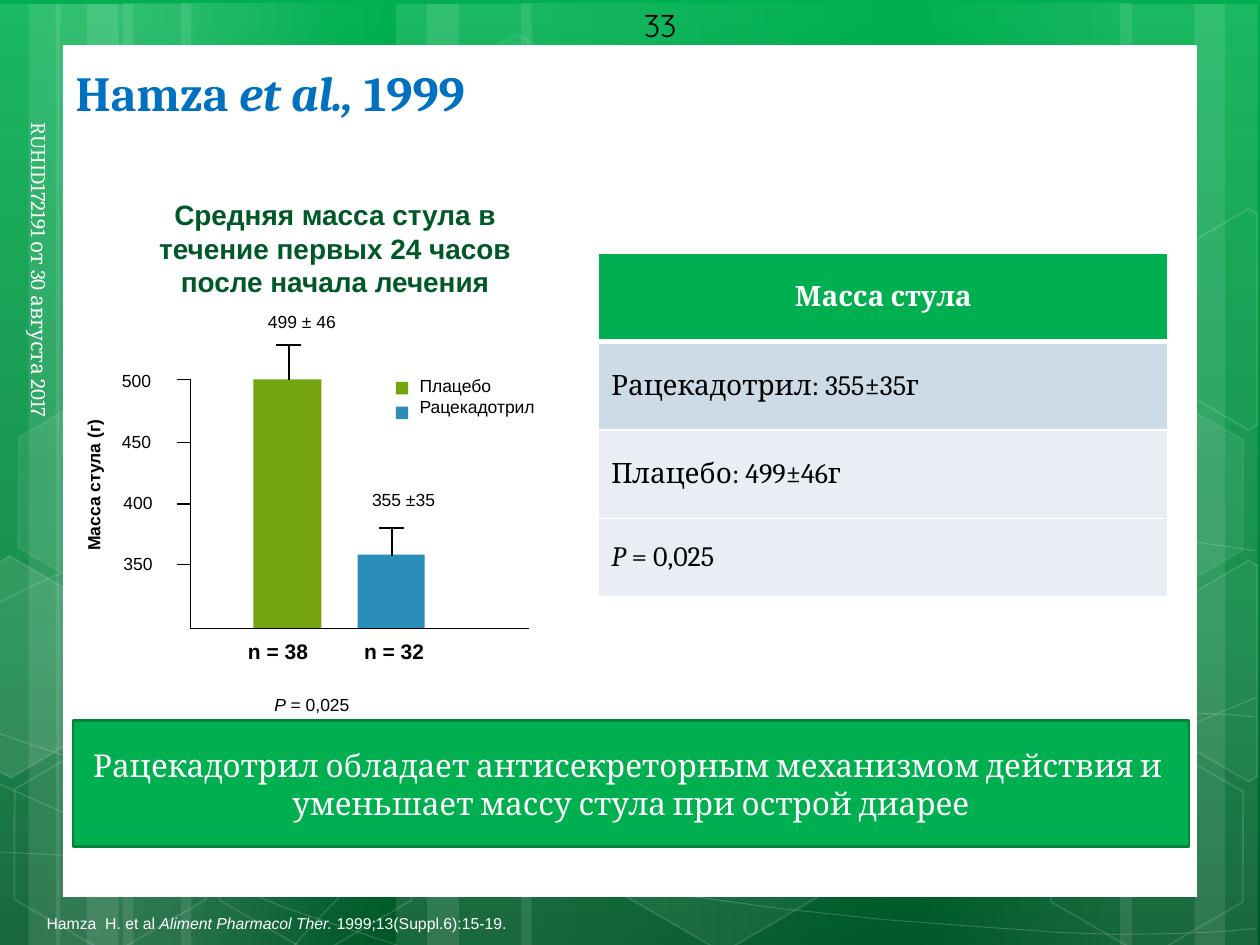
from copy import deepcopy
from dataclasses import dataclass
from math import cos, radians, sin
from lxml.etree import SubElement
from pptx import Presentation
from pptx.dml.color import RGBColor
from pptx.enum.shapes import MSO_CONNECTOR, MSO_SHAPE
from pptx.enum.text import MSO_ANCHOR, MSO_AUTO_SIZE, PP_ALIGN
from pptx.oxml.ns import qn
from pptx.util import Cm, Pt

RECT, HEX = MSO_SHAPE.RECTANGLE, MSO_SHAPE.HEXAGON
LINE = MSO_CONNECTOR.STRAIGHT
LEFT, MID = PP_ALIGN.LEFT, PP_ALIGN.CENTER
CENTRE, BOTTOM = MSO_ANCHOR.MIDDLE, MSO_ANCHOR.BOTTOM
FIT, FIXED = MSO_AUTO_SIZE.SHAPE_TO_FIT_TEXT, MSO_AUTO_SIZE.NONE


@dataclass
class Theme:
    white: RGBColor = RGBColor.from_string("FFFFFF")
    black: RGBColor = RGBColor.from_string("000000")
    green: RGBColor = RGBColor.from_string("00B050")
    mid: RGBColor = RGBColor.from_string("00843C")
    dark: RGBColor = RGBColor.from_string("005828")
    rim: RGBColor = RGBColor.from_string("00823B")
    blue: RGBColor = RGBColor.from_string("0070C0")
    lime: RGBColor = RGBColor.from_string("74A510")
    sky: RGBColor = RGBColor.from_string("2A8DBA")
    band: RGBColor = RGBColor.from_string("CDDBE7")
    pale: RGBColor = RGBColor.from_string("E8EEF3")
    serif: str = "Cambria"
    sans: str = "Arial"
    round: str = "Quicksand"
    title: int = 28
    lead: int = 18
    head: int = 16
    note: int = 12
    label: int = 10
    cite: int = 9


theme = Theme()


def paint(shape, fill=None, alpha=100, edge=None, width=1, thin=100):
    shape.shadow.inherit = False
    for part, hue, share, tag in ((shape.fill, fill, alpha, None), (shape.line.fill, edge, thin, "a:ln")):
        if hue is None:
            part.background()
            continue
        part.solid()
        part.fore_color.rgb = hue
        if share < 100:
            props = shape.element.spPr
            owner = props.find(qn(tag)) if tag else props
            mark = SubElement(owner.find(qn("a:solidFill"))[0], qn("a:alpha"))
            mark.set("val", str(share * 1000))
    if edge is not None:
        shape.line.width = Pt(width)


def write(para, runs, font, size, hue, bold=False, align=LEFT):
    para.alignment = align
    for text, slant in runs:
        run = para.add_run()
        run.text = text
        run.font.name, run.font.size = font, Pt(size)
        run.font.bold, run.font.italic = bold, slant
        run.font.color.rgb = hue


deck = Presentation()
deck.slide_width, deck.slide_height = Cm(25.4), Cm(19.05)
slide = deck.slides.add_slide(deck.slide_layouts[5])
shapes = slide.shapes

back = slide.background.fill
back.gradient()
back.gradient_angle = 270
stops = slide.element.find(".//" + qn("a:gsLst"))
stops.append(deepcopy(stops[-1]))
for stop, place, hue in zip(back.gradient_stops, (0, 0.62, 1), (theme.green, theme.mid, theme.dark)):
    stop.position = place
    stop.color.rgb = hue

for left, width, turn in (
    (2.49, 4.45, 0), (-0.05, 1.27, 0), (0.58, 2.11, 0), (3.66, 4.45, 0), (1.12, 1.27, 0), (1.75, 2.11, 0),
    (18.36, 4.45, 180), (24.08, 1.27, 180), (22.58, 2.11, 180),
    (10.52, 7.82, 0), (7.98, 1.27, 0), (8.61, 2.11, 0),
):
    strip = shapes.add_shape(RECT, Cm(left), Cm(0.08), Cm(width), Cm(19.05))
    strip.rotation = turn
    paint(strip, theme.white, 10)
    if width > 4:
        strip.fill.gradient()
        strip.fill.gradient_angle = 0
        for stop, alpha in zip(strip.fill.gradient_stops, (10, 0)):
            stop.color.rgb = theme.white
        for node, alpha in zip(strip.element.spPr.iter(qn("a:srgbClr")), (10, 0)):
            SubElement(node, qn("a:alpha"), val=str(alpha * 1000))

curves = (
    ((-0.1, 17.17), (1.27, 17.25), (2.64, 17.32), (4.55, 17.3), (6.45, 17.27), (8.81, 17.22), (11.35, 16.97),
     (13.89, 16.71), (17.5, 16.23), (19.84, 15.75), (22.15, 15.27), (24.54, 14.5), (25.3, 14.07)),
    ((-0.1, 12.19), (0.64, 11.81), (1.37, 11.4), (2.82, 11.02), (4.24, 10.64), (6.3, 10.11), (8.53, 9.91),
     (10.8, 9.73), (13.54, 9.7), (16.33, 9.91), (19.13, 10.11), (23.77, 10.9), (25.3, 11.1)),
    ((-0.13, 15.75), (2.95, 17.15), (5.99, 18.54), (8.23, 19.13)),
    ((-0.1, 14.76), (0.71, 15.04), (1.5, 15.32), (2.97, 15.72), (4.45, 16.13), (6.65, 16.74), (8.79, 17.17),
     (10.9, 17.6), (13.56, 18.06), (15.67, 18.31), (17.78, 18.59), (20.04, 18.69), (21.39, 18.8),
     (22.73, 18.87), (23.06, 18.82), (23.72, 18.82), (24.38, 18.8), (24.84, 18.77), (25.3, 18.72)),
    ((5.87, 19.13), (6.32, 18.62), (6.78, 18.08), (7.39, 17.63), (8, 17.17), (8.86, 16.66), (9.58, 16.31),
     (10.29, 15.95), (10.72, 15.8), (11.66, 15.54), (12.57, 15.29), (14.3, 14.94), (15.19, 14.76),
     (16.08, 14.58), (16.21, 14.61), (16.99, 14.53), (17.78, 14.45), (19.02, 14.4), (19.89, 14.38),
     (20.78, 14.33), (22.23, 14.38), (23.93, 14.38), (24.38, 14.38), (24.82, 14.4), (25.27, 14.45)),
)
for curve in curves:
    points = []
    for i in range(0, len(curve) - 1, 3):
        for t in (1 / 3, 2 / 3, 1):
            parts = ((1 - t) ** 3, 3 * t * (1 - t) ** 2, 3 * t * t * (1 - t), t ** 3)
            points.append([Cm(sum(w * p[k] for w, p in zip(parts, curve[i:i + 4]))) for k in (0, 1)])
    pen = shapes.build_freeform(Cm(curve[0][0]), Cm(curve[0][1]))
    pen.add_line_segments(points, close=False)
    paint(pen.convert_to_shape(), edge=theme.white, width=0.5, thin=20)

for left, top, alpha, thin in (
    (8.2, 0.99, 4, 8), (12.34, 15.04, 6, 12), (0, 15.09, 0, 12), (0.08, 8, 7, 8),
    (4.14, 15.11, 0, 12), (20.9, 15.14, 0, 12), (20.9, 8.05, 7, 8),
):
    cell = shapes.add_shape(HEX, Cm(left), Cm(top), Cm(4.45), Cm(3.86))
    cell.rotation = 30
    cell.adjustments[0], cell.adjustments[1] = 0.285, 1.155
    paint(cell, theme.white if alpha else None, alpha, theme.white, 1, thin)

west = ((-0.08, 11.38), (0.2, 11.2), (2.16, 12.34), (2.13, 14.55), (0.23, 15.67), (-0.05, 15.52))
east = ((23.24, 12.42), (25.17, 11.3), (25.35, 11.4), (25.35, 15.65), (25.17, 15.75), (23.24, 14.63))
c, s = cos(radians(30)), sin(radians(30))
for outline, hub, mid, rise, alpha in (
    (west, 0.63, 13.69, 0, 10), (east, 24.74, 13.28, 0, 4), (east, 24.74, 13.28, 7.09, 0),
):
    arms = [(x - hub, y - mid) for x, y in outline]
    points = [(Cm(hub + x * c + y * s), Cm(mid - rise + y * c - x * s)) for x, y in arms]
    pen = shapes.build_freeform(*points[0])
    pen.add_line_segments(points[1:])
    facet = pen.convert_to_shape()
    facet.rotation = 30
    paint(facet, theme.white if alpha else None, alpha, theme.white, 1, 12)

for left, top, width, height, hue in (
    (1.27, 0.91, 22.86, 17.17, theme.white),
    (5.11, 7.65, 1.37, 5.03, theme.lime), (7.21, 11.18, 1.35, 1.5, theme.sky),
    (7.98, 7.7, 0.25, 0.25, theme.lime), (7.98, 8.2, 0.25, 0.25, theme.sky),
):
    paint(shapes.add_shape(RECT, Cm(left), Cm(top), Cm(width), Cm(height)), hue)

title = shapes.title
title.left, title.top, title.width, title.height = Cm(1.27), Cm(0), Cm(20.47), Cm(2.57)
title.text_frame.vertical_anchor = BOTTOM
title.text_frame.auto_size = FIXED
write(title.text_frame.paragraphs[0], (("Hamza ", False), ("et al., ", True), ("1999", False)),
      theme.serif, theme.title, theme.blue, True)
shapes.element.append(title.element)

rules = [(3.84, 7.65, 3.84, 12.67), (3.84, 12.67, 10.67, 12.67)]
rules += [(3.56, y, 3.84, y) for y in (7.65, 8.92, 10.16, 11.38)]
for x, top, base in ((5.82, 6.96, 7.67), (7.9, 10.64, 11.2)):
    rules += [(x, top, x, base), (x - 0.25, top, x + 0.25, top)]
for ends in rules:
    rule = shapes.add_connector(LINE, *map(Cm, ends))
    rule.line.color.rgb, rule.line.width = theme.black, Pt(1)
    SubElement(rule.element.spPr, qn("a:effectLst"))

small = (theme.sans, theme.label, theme.black)
bold = (theme.sans, theme.note, theme.black, True)
boxes = [
    (2.16, 3.86, 9.19, 2.29, 0, True, (("Средняя масса стула в течение первых 24 часов после начала лечения", False),),
     (theme.sans, theme.head, theme.dark, True, MID)),
    (7.26, 9.73, 1.75, 0.66, 0, False, (("355 ±35", False),), (*small, False, MID)),
    (5.16, 6.15, 1.85, 0.66, 0, False, (("499 ± 46", False),), (*small, False, MID)),
    (4.75, 12.8, 1.96, 0.81, 0, False, (("n = 38", False),), bold),
    (7.09, 12.8, 1.96, 0.81, 0, False, (("n = 32", False),), bold),
    (0.3, 9.4, 3.15, 0.66, 270, False, (("Масса стула (г)", False),), (*small, True)),
    (5.33, 13.87, 2.54, 0.66, 0, True, (("P", True), (" = 0,025", False)), small),
    (12.73, 0, 3.71, 1.02, 0, True, (("33", False),), (theme.round, theme.lead, theme.black)),
    (-5.49, 8.13, 12.57, 0.76, 90, True, (("RUHID172191 от 30 августа 2017", False),),
     (theme.serif, theme.note, theme.white)),
]
for value, left, top in ((500, 2.26, 7.34), (450, 2.26, 8.56), (400, 2.29, 9.8), (350, 2.29, 11.02)):
    boxes.append((left, top, 1.23, 0.76, 0, False, ((str(value), False),), small))
for left, top, width, height, turn, wrap, runs, look in boxes:
    box = shapes.add_textbox(Cm(left), Cm(top), Cm(width), Cm(height))
    box.rotation = turn
    frame = box.text_frame
    frame.word_wrap, frame.auto_size = wrap, FIT
    para = frame.paragraphs[0]
    if look[1] == theme.label:
        frame.margin_left = frame.margin_right = Cm(0.2)
    if look is bold:
        para.line_spacing = 0.9
    write(para, runs, *look)

keys = (("Плацебо", False),), (("Рацекадотрил", False),)
cite = ((("Hamza  H. et al ", False), ("Aliment Pharmacol Ther. ", True), ("1999;13(Suppl.6):15-19.", False)),)
for left, top, width, height, wrap, lines, look in (
    (8.46, 7.57, 2.36, 0.86, False, keys, small),
    (0.94, 18.42, 13.41, 0.38, True, cite, (theme.sans, theme.cite, theme.white)),
):
    frame = shapes.add_textbox(Cm(left), Cm(top), Cm(width), Cm(height)).text_frame
    frame.margin_left = frame.margin_right = frame.margin_top = frame.margin_bottom = 0
    frame.word_wrap, frame.auto_size = wrap, FIT
    for i, runs in enumerate(lines):
        para = frame.add_paragraph() if i else frame.paragraphs[0]
        if lines is keys:
            para.line_spacing = Pt(12)
        write(para, runs, *look)

rows = (
    (1.78, theme.green, (("Масса стула", False),), (theme.white, True, MID)),
    (1.78, theme.band, (("Рацекадотрил: 355±35г", False),), (theme.black,)),
    (1.78, theme.pale, (("Плацебо: 499±46г", False),), (theme.black,)),
    (1.57, theme.pale, (("P ", True), ("= 0,025", False)), (theme.black,)),
)
table = shapes.add_table(4, 1, Cm(12.07), Cm(5.11), Cm(11.48), Cm(6.91)).table
table.horz_banding = False
for i, (height, hue, runs, look) in enumerate(rows):
    table.rows[i].height = Cm(height)
    cell = table.cell(i, 0)
    cell.vertical_anchor = CENTRE
    write(cell.text_frame.paragraphs[0], runs, theme.serif, theme.head, *look)
    props = cell._tc.get_or_add_tcPr()
    for side in "LRTB":
        heavy = (i, side) in ((0, "B"), (1, "T"))
        edge = SubElement(props, qn("a:ln" + side), w=str(Pt(3 if heavy else 1)))
        SubElement(SubElement(edge, qn("a:solidFill")), qn("a:srgbClr"), val=str(theme.white))
    cell.fill.solid()
    cell.fill.fore_color.rgb = hue

banner = shapes.add_shape(RECT, Cm(1.47), Cm(14.53), Cm(22.5), Cm(2.54))
paint(banner, theme.green, edge=theme.rim, width=1.5)
banner.text_frame.word_wrap = True
banner.text_frame.vertical_anchor = CENTRE
claim = "Рацекадотрил обладает антисекреторным механизмом действия и  уменьшает массу стула при острой диарее"
write(banner.text_frame.paragraphs[0], ((claim, False),), theme.serif, theme.lead, theme.white, align=MID)

deck.save("out.pptx")
